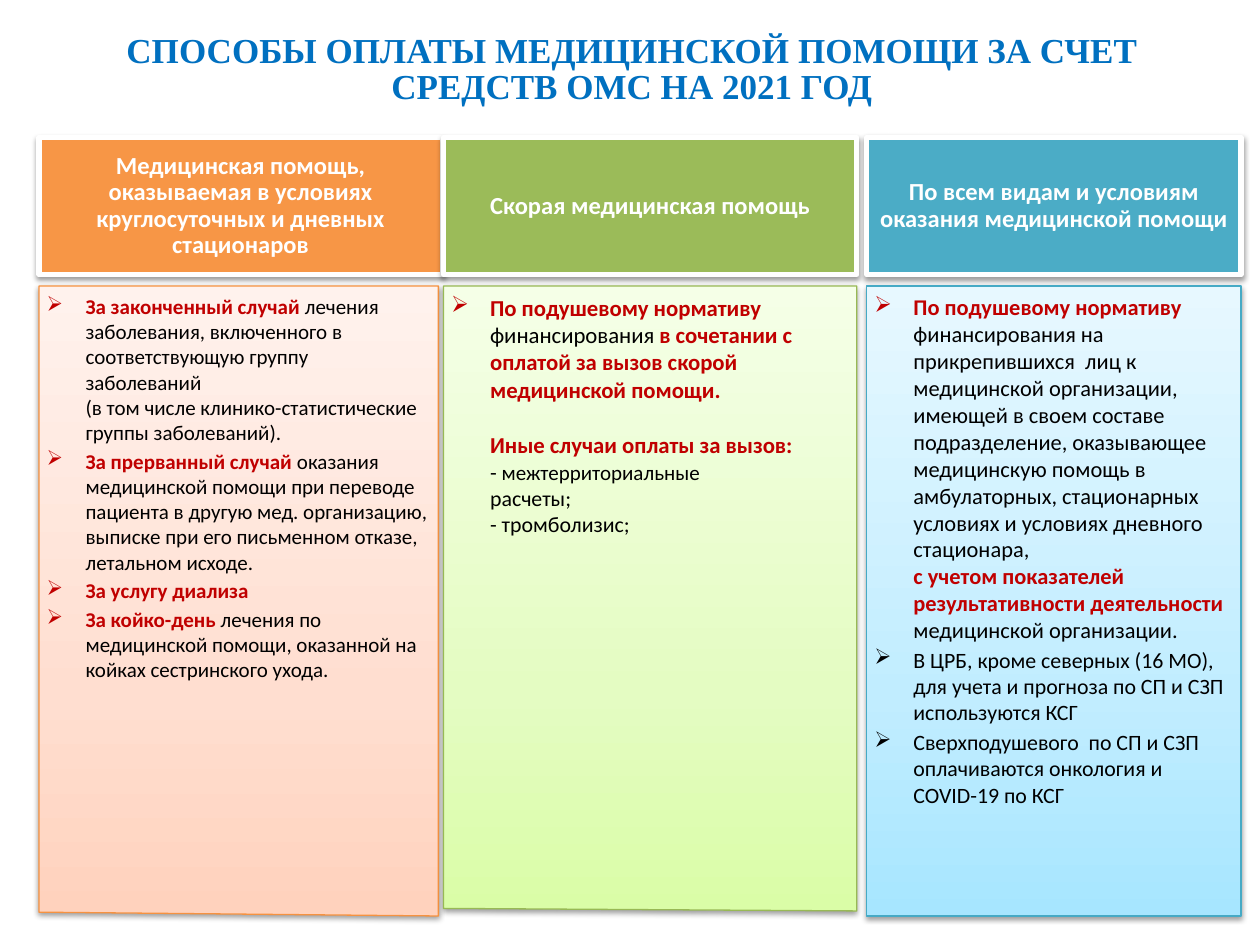
from lxml import etree
from pptx import Presentation
from pptx.dml.color import RGBColor
from pptx.enum.text import MSO_ANCHOR, PP_ALIGN
from pptx.oxml import parse_xml
from pptx.oxml.ns import qn
from pptx.util import Inches, Pt

CENTER, LEFT = PP_ALIGN.CENTER, PP_ALIGN.LEFT
TOP, MIDDLE = MSO_ANCHOR.TOP, MSO_ANCHOR.MIDDLE
NS = 'xmlns:a="http://schemas.openxmlformats.org/drawingml/2006/main"'

THEME = {
    "title_font": "Times New Roman", "font": "Calibri",
    "title": "0070C0", "accent": "C00000", "text": "000000", "white": "FFFFFF",
    "title_size": 20, "header_size": 14,
}

TITLE = "СПОСОБЫ ОПЛАТЫ МЕДИЦИНСКОЙ ПОМОЩИ ЗА СЧЕТ СРЕДСТВ ОМС НА 2021 ГОД"

# Paragraph: runs of (text, emphasised, optional own size), plus optional format.
COLUMNS = [
    {"left": 0.31, "header_width": 3.2, "width": 3.17, "bottoms": (7.24, 7.27),
     "fill": "F79646", "line": "F69240", "stops": ("FFD2BD", "FFDED0", "FFF2ED"),
     "size": 12,
     "header": "Медицинская помощь, оказываемая в условиях круглосуточных и дневных стационаров",
     "body": [
         {"runs": [("За законченный случай ", True),
                   ("лечения заболевания, включенного в соответствующую группу заболеваний \n"
                    "(в том числе клинико-статистические группы заболеваний).", False)]},
         {"runs": [("За прерванный случай ", True),
                   ("оказания медицинской помощи при переводе пациента в другую мед. организацию, "
                    "выписке при его письменном отказе, летальном исходе.", False)]},
         {"runs": [("За услугу диализа", True)]},
         {"runs": [("За койко-день", True),
                   (" лечения по медицинской помощи, оказанной на койках сестринского ухода.", False)]},
     ]},
    {"left": 3.52, "header_width": 3.28, "width": 3.28, "bottoms": (7.21, 7.23),
     "fill": "9BBB59", "line": "98B955", "stops": ("DAFDA7", "E4FCC2", "F5FFE7"),
     "size": 13,
     "header": "Скорая медицинская помощь",
     "body": [
         {"runs": [("По подушевому нормативу ", True), ("финансирования ", False),
                   ("в сочетании с оплатой за вызов скорой медицинской помощи.", True)]},
         {"runs": [("Иные случаи оплаты за вызов:\n", True), ("- ", False, 12.5),
                   ("межтерриториальные\n", False, 12),
                   ("расчеты;\n- тромболизис;", False, 12.5)],
          "bullet": None, "before": 14},
     ]},
    {"left": 6.88, "header_width": 2.97, "width": 2.97, "bottoms": (7.27, 7.27),
     "fill": "4BACC6", "line": "46AAC5", "stops": ("A7E6FF", "C1EDFF", "E7F8FF"),
     "size": 12.8,
     "header": "По всем видам и условиям оказания медицинской помощи",
     "body": [
         {"runs": [("По подушевому нормативу ", True),
                   ("финансирования на прикрепившихся  лиц к медицинской организации, имеющей в своем "
                    "составе подразделение, оказывающее медицинскую помощь в амбулаторных, стационарных "
                    "условиях и условиях дневного стационара,\n", False),
                   ("с учетом показателей результативности деятельности ", True),
                   ("медицинской организации.", False)]},
         {"runs": [("В ЦРБ, кроме северных (16 МО), для учета и прогноза по СП и СЗП "
                    "используются КСГ", False, 12.5)]},
         {"runs": [("Сверхподушевого  по СП и СЗП оплачиваются онкология и COVID-19 по КСГ",
                    False, 12.5)]},
     ]},
]

HEADER_TOP, HEADER_BOTTOM, BODY_TOP = 1.09, 2.18, 2.27
INDENT = Inches(0.31)


def add_text(p, text, *, size, color, bold=False, font=THEME["font"]):
    """Append text to a paragraph, turning newlines into line breaks."""
    for i, line in enumerate(text.split("\n")):
        if i:
            p.add_line_break()
        if line:
            r = p.add_run()
            r.text = line
            r.font.size, r.font.bold, r.font.name = Pt(size), bold, font
            r.font.color.rgb = RGBColor.from_string(color)


def set_bullet(p, char):
    """Give a paragraph its hanging indent and, if there is one, its bullet."""
    pPr = p._p.get_or_add_pPr()
    pPr.set("marL", str(INDENT))
    pPr.set("indent", str(-INDENT if char else 0))
    if char:
        etree.SubElement(pPr, qn("a:buChar")).set("char", char)
    else:
        etree.SubElement(pPr, qn("a:buNone"))


def set_gradient(s, colors):
    """Fill upwards from the bottom edge with three colours."""
    stops = "".join(f'<a:gs pos="{pos}"><a:srgbClr val="{c}"/></a:gs>'
                    for pos, c in zip((0, 35000, 100000), colors))
    s.fill.background()
    no_fill = s._element.spPr.find(qn("a:noFill"))
    no_fill.getparent().replace(no_fill, parse_xml(
        f'<a:gradFill {NS} rotWithShape="1"><a:gsLst>{stops}</a:gsLst>'
        '<a:lin ang="16200000" scaled="0"/></a:gradFill>'))


def set_shadow(s):
    s.shadow.inherit = False
    s._element.spPr.find(qn("a:effectLst")).append(parse_xml(
        f'<a:outerShdw {NS} blurRad="{Pt(3.1)}" dist="{Pt(1.6)}" dir="5400000" rotWithShape="0">'
        '<a:srgbClr val="000000"><a:alpha val="38000"/></a:srgbClr></a:outerShdw>'))


def add_panel(slide, left, top, width, bottoms, *, line, line_width, insets, anchor):
    """Draw a panel whose left and right bottom corners may differ in height."""
    right = left + width
    corners = [(right, top), (right, bottoms[1]), (left, bottoms[0])]
    builder = slide.shapes.build_freeform(Inches(left), Inches(top))
    builder.add_line_segments([(Inches(x), Inches(y)) for x, y in corners], close=True)
    s = builder.convert_to_shape()
    s.line.color.rgb, s.line.width = RGBColor.from_string(line), Pt(line_width)
    set_shadow(s)
    tf = s.text_frame
    tf.word_wrap, tf.vertical_anchor = True, anchor
    tf.margin_left, tf.margin_top, tf.margin_right, tf.margin_bottom = map(Inches, insets)
    return s


def add_header(slide, col):
    s = add_panel(slide, col["left"], HEADER_TOP, col["header_width"], (HEADER_BOTTOM,) * 2,
                  line=THEME["white"], line_width=3,
                  insets=(0.08, 0.04, 0.08, 0.04), anchor=MIDDLE)
    s.fill.solid()
    s.fill.fore_color.rgb = RGBColor.from_string(col["fill"])
    p = s.text_frame.paragraphs[0]
    p.alignment, p.line_spacing = CENTER, 0.9
    add_text(p, col["header"], size=THEME["header_size"], color=THEME["white"], bold=True)


def add_body(slide, col):
    s = add_panel(slide, col["left"], BODY_TOP, col["width"], col["bottoms"],
                  line=col["line"], line_width=0.75,
                  insets=(0.06, 0.06, 0.08, 0.09), anchor=TOP)
    set_gradient(s, col["stops"])
    tf = s.text_frame
    for i, item in enumerate(col["body"]):
        p = tf.add_paragraph() if i else tf.paragraphs[0]
        p.alignment = LEFT
        p.space_before, p.space_after = Pt(item.get("before", 0)), Pt(2)
        set_bullet(p, item.get("bullet", "➢"))
        for text, emphasis, *size in item["runs"]:
            add_text(p, text, size=size[0] if size else col["size"], bold=emphasis,
                     color=THEME["accent" if emphasis else "text"])


def main():
    prs = Presentation()
    prs.slide_width, prs.slide_height = Inches(10), Inches(7.5)
    slide = prs.slides.add_slide(prs.slide_layouts[6])

    tf = slide.shapes.add_textbox(*map(Inches, (0.78, 0.23, 8.47, 0.67))).text_frame
    tf.word_wrap = True
    p = tf.paragraphs[0]
    p.alignment, p.line_spacing = CENTER, 0.85
    add_text(p, TITLE, size=THEME["title_size"], color=THEME["title"], bold=True,
             font=THEME["title_font"])

    for col in COLUMNS:
        add_header(slide, col)
        add_body(slide, col)
    prs.save("out.pptx")


if __name__ == "__main__":
    main()
